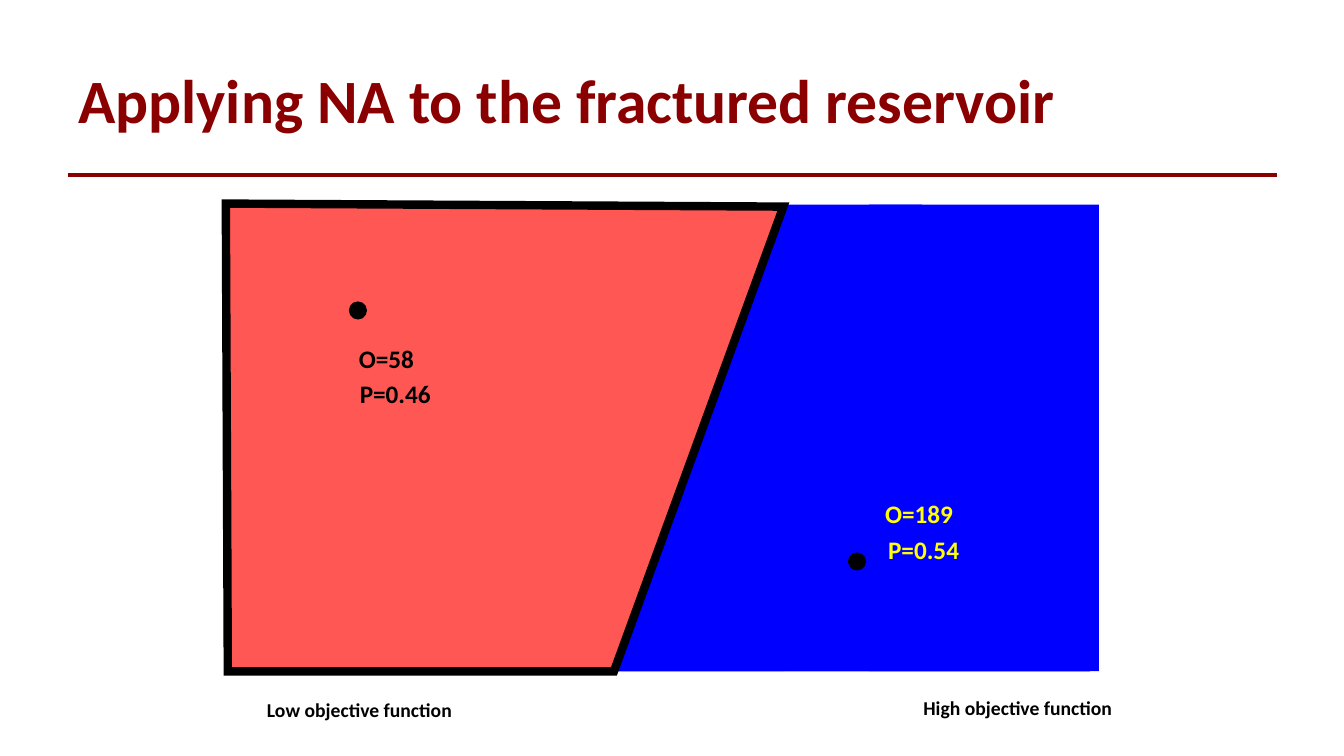
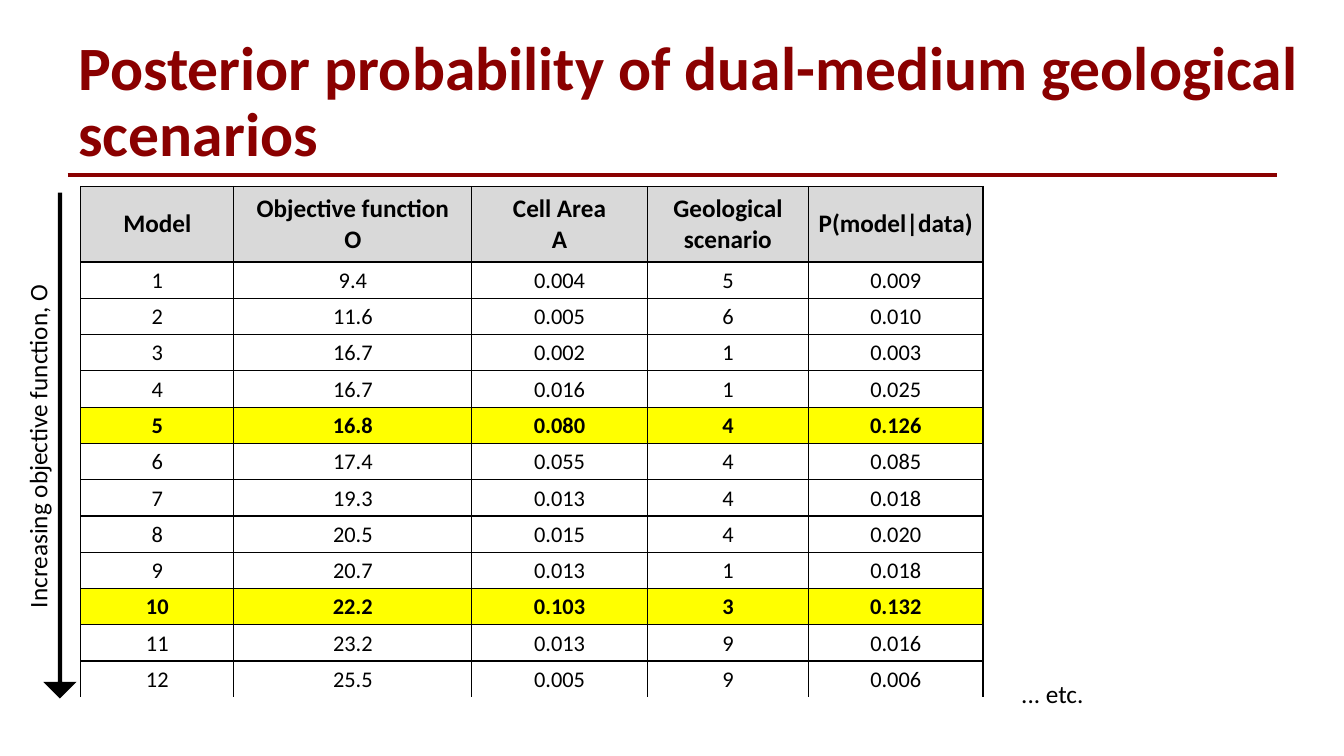
from lxml.etree import SubElement
from pptx import Presentation
from pptx.dml.color import RGBColor
from pptx.enum.shapes import MSO_CONNECTOR as Connector, MSO_SHAPE as Preset
from pptx.enum.text import MSO_ANCHOR as Anchor, PP_ALIGN as Align
from pptx.oxml.ns import qn
from pptx.util import Inches, Pt

FONT = "Calibri"
BLACK, MAROON, RED = "000000", "8A0000", "FF5854"
BLUE, YELLOW, GREY = "0000FF", "FFFF00", "D9D9D9"

RESERVOIR_TITLE = "Applying NA to the fractured reservoir"
REGIONS = [
    (Preset.RECTANGLE, (2.25, 2.03, 5.53, 4.63), RED),
    (Preset.TRAPEZOID, (6.11, 2.03, 4.7, 4.63), BLUE),
    (Preset.RECTANGLE, (8.62, 2.03, 2.28, 4.63), BLUE),
]
CELL_EDGE = (6.11, 6.66, 7.76, 2.05)
CELL_OUTLINE = [(2.24, 2.02), (7.77, 2.05), (6.09, 6.66), (2.26, 6.66)]
SAMPLES = [(8.41, 5.48), (3.46, 2.99)]
SAMPLE_SIZE = 0.18
REGION_LABELS = [
    ("Low objective function", (2.55, 6.87, 3.3, 0.34), 14, BLACK),
    ("High objective function", (9.06, 6.86, 3.3, 0.34), 14, BLACK),
    ("O=58", (3.46, 3.36, 1.31, 0.4), 18, BLACK),
    ("P=0.46", (3.47, 3.7, 1.31, 0.4), 18, BLACK),
    ("O=189", (8.68, 4.89, 1.31, 0.4), 18, YELLOW),
    ("P=0.54", (8.71, 5.25, 1.31, 0.4), 18, YELLOW),
]

POSTERIOR_TITLE = "Posterior probability of dual-medium geological scenarios"
HEADERS = ["Model", "Objective function\nO", "Cell Area\nA",
           "Geological scenario", "P(model|data)"]
MODELS = [
    ("1", "9.4", "0.004", "5", "0.009"),
    ("2", "11.6", "0.005", "6", "0.010"),
    ("3", "16.7", "0.002", "1", "0.003"),
    ("4", "16.7", "0.016", "1", "0.025"),
    ("5", "16.8", "0.080", "4", "0.126"),
    ("6", "17.4", "0.055", "4", "0.085"),
    ("7", "19.3", "0.013", "4", "0.018"),
    ("8", "20.5", "0.015", "4", "0.020"),
    ("9", "20.7", "0.013", "1", "0.018"),
    ("10", "22.2", "0.103", "3", "0.132"),
    ("11", "23.2", "0.013", "9", "0.016"),
    ("12", "25.5", "0.005", "9", "0.006"),
]
HIGHLIGHTED = {"5", "10"}
COLUMN_WIDTHS = [1.52, 2.36, 1.74, 1.6, 1.73]
HEADER_HEIGHT, ROW_HEIGHT = 0.75, 0.36


def inches(values):
    """Turn plain numbers into lengths."""
    return [Inches(value) for value in values]


def rgb(color):
    """Turn a hex string into a colour."""
    return RGBColor.from_string(color)


def style_text(frame, size, color, bold=False, align=Align.LEFT):
    """Format every run of a text frame."""
    for para in frame.paragraphs:
        para.alignment = align
        for span in para.runs:
            span.font.name = FONT
            span.font.size = Pt(size)
            span.font.bold = bold
            span.font.color.rgb = rgb(color)


def add_text(page, text, place, size, color=BLACK, bold=False):
    """Add a wrapping text box."""
    box = page.shapes.add_textbox(*inches(place))
    box.text_frame.word_wrap = True
    box.text_frame.text = text
    style_text(box.text_frame, size, color, bold)
    return box


def add_filled(page, preset, place, fill):
    """Add a flat preset shape without an outline."""
    shape = page.shapes.add_shape(preset, *inches(place))
    shape.shadow.inherit = False
    shape.fill.solid()
    shape.fill.fore_color.rgb = rgb(fill)
    shape.line.fill.background()
    return shape


def add_line(page, ends, color, width):
    """Add a straight line without a shadow."""
    line = page.shapes.add_connector(Connector.STRAIGHT, *inches(ends))
    line.line.color.rgb = rgb(color)
    line.line.width = Pt(width)
    SubElement(line._element.spPr, qn("a:effectLst"))


def add_page(deck, title, width):
    """Add a slide with its title and rule."""
    page = deck.slides.add_slide(deck.slide_layouts[6])
    add_line(page, (0.67, 1.74, 12.67, 1.74), MAROON, 3)
    box = add_text(page, title, (0.68, 0.3, width, 1.45), 44, MAROON, True)
    box.text_frame.vertical_anchor = Anchor.MIDDLE
    box.text_frame.paragraphs[0].line_spacing = 0.9
    return page


def add_outline(page, points):
    """Draw the thick outline of a cell."""
    corners = [tuple(inches(point)) for point in points]
    builder = page.shapes.build_freeform(*corners[0])
    builder.add_line_segments(corners[1:], close=True)
    outline = builder.convert_to_shape()
    outline.shadow.inherit = False
    outline.fill.background()
    outline.line.color.rgb = rgb(BLACK)
    outline.line.width = Pt(6)
    SubElement(outline.line._get_or_add_ln(), qn("a:miter"), lim="800000")


def set_borders(cell, open_bottom):
    """Give a cell black borders, with an optional open bottom."""
    props = cell._tc.get_or_add_tcPr()
    for side in "LRTB":
        border = SubElement(props, qn(f"a:ln{side}"), w=str(Pt(1)))
        if side == "B" and open_bottom:
            SubElement(border, qn("a:noFill"))
        else:
            fill = SubElement(border, qn("a:solidFill"))
            SubElement(fill, qn("a:srgbClr"), val=BLACK)


def fill_cell(cell, text, size, bold, color, open_bottom):
    """Write and format one table cell."""
    cell.text = text
    cell.vertical_anchor = Anchor.MIDDLE
    style_text(cell.text_frame, size, BLACK, bold, Align.CENTER)
    set_borders(cell, open_bottom)
    if color:
        cell.fill.solid()
        cell.fill.fore_color.rgb = rgb(color)
    else:
        cell.fill.background()


def add_model_table(page):
    """Add the table of models."""
    rows = [HEADERS, *MODELS]
    heights = [HEADER_HEIGHT] + [ROW_HEIGHT] * len(MODELS)
    place = (0.8, 1.85, sum(COLUMN_WIDTHS), sum(heights))
    table = page.shapes.add_table(len(rows), len(HEADERS), *inches(place)).table
    table.first_row = table.horz_banding = False
    for column, width in zip(table.columns, COLUMN_WIDTHS):
        column.width = Inches(width)
    for index, (values, height) in enumerate(zip(rows, heights)):
        table.rows[index].height = Inches(height)
        is_header = index == 0
        marked = values[0] in HIGHLIGHTED
        color = GREY if is_header else YELLOW if marked else None
        for cell, text in zip(table.rows[index].cells, values):
            if not is_header:
                cell.margin_left = cell.margin_right = cell.margin_top = Inches(0.01)
                cell.margin_bottom = 0
            fill_cell(cell, text, 18 if is_header else 16, is_header or marked,
                      color, index == len(MODELS))


def build_reservoir(deck):
    """Build the slide with the two cells."""
    page = add_page(deck, RESERVOIR_TITLE, 11.5)
    for preset, place, fill in REGIONS:
        region = add_filled(page, preset, place, fill)
        if preset == Preset.TRAPEZOID:
            region.adjustments[0] = 0.36
    add_line(page, CELL_EDGE, BLACK, 1)
    for left, top in SAMPLES:
        add_filled(page, Preset.OVAL, (left, top, SAMPLE_SIZE, SAMPLE_SIZE), BLACK)
    for text, place, size, color in REGION_LABELS:
        add_text(page, text, place, size, color, True)
    add_outline(page, CELL_OUTLINE)


def build_posterior(deck):
    """Build the slide with the table of models."""
    page = add_page(deck, POSTERIOR_TITLE, 12.65)
    add_text(page, "... etc.", (10.03, 6.68, 3.3, 0.4), 18)
    add_model_table(page)
    arrow = add_filled(page, Preset.DOWN_ARROW, (0.43, 1.91, 0.33, 5.02), BLACK)
    arrow.adjustments[0] = 0.13
    caption = add_text(page, "Increasing objective function, O",
                       (-1.41, 4.15, 3.56, 0.4), 18)
    caption.rotation = 270


def main():
    """Build and save the deck."""
    deck = Presentation()
    deck.slide_width, deck.slide_height = inches((13.33, 7.5))
    build_reservoir(deck)
    build_posterior(deck)
    deck.save("out.pptx")


if __name__ == "__main__":
    main()
